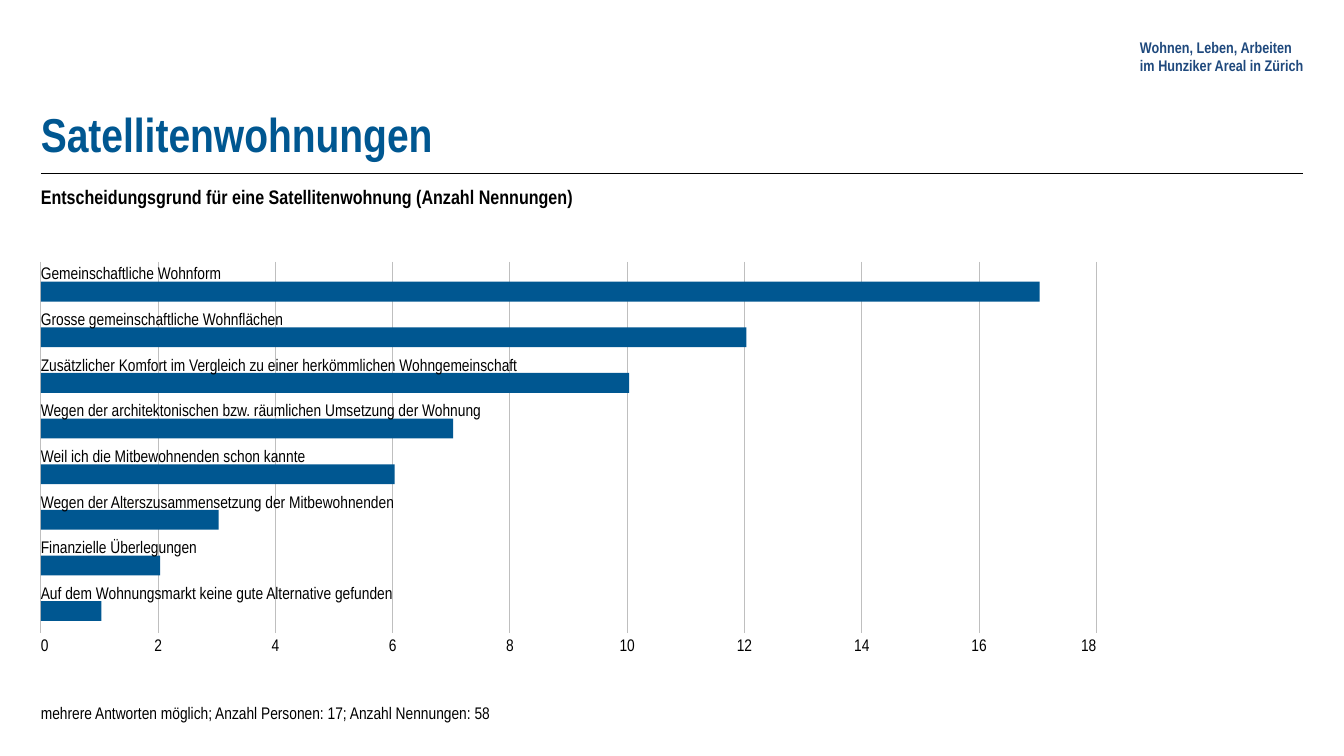
from lxml.etree import SubElement
from pptx import Presentation
from pptx.dml.color import RGBColor
from pptx.enum.shapes import MSO_CONNECTOR as Connector, MSO_SHAPE as Shape
from pptx.enum.text import MSO_ANCHOR as Anchor, PP_ALIGN as Align
from pptx.oxml.ns import qn
from pptx.util import Cm, Pt

COLORS = {"blue": "005791", "navy": "1F497D", "grid": "BFBFBF", "black": "000000"}
FONT = "Arial Narrow"

LEFT = 1.03
CONTENT_WIDTH = 31.8
LABEL_WIDTH = 15.2
LABEL_HEIGHT = 0.46

AXIS_MAX = 18
AXIS_STEP = 2
AXIS_WIDTH = 26.6
UNIT = AXIS_WIDTH / AXIS_MAX
GRID_TOP = 6.6
GRID_BOTTOM = 15.95
TICK_TOP = 16
TICK_WIDTH = 1.2

FIRST_BAR_TOP = 7.1
BAR_PITCH = 1.15
BAR_HEIGHT = 0.5
BAR_EXTRA = 0.05
LABEL_RISE = 0.47

REASONS = [
    ("Gemeinschaftliche Wohnform", 17),
    ("Grosse gemeinschaftliche Wohnflächen", 12),
    ("Zusätzlicher Komfort im Vergleich zu einer herkömmlichen Wohngemeinschaft", 10),
    ("Wegen der architektonischen bzw. räumlichen Umsetzung der Wohnung", 7),
    ("Weil ich die Mitbewohnenden schon kannte", 6),
    ("Wegen der Alterszusammensetzung der Mitbewohnenden", 3),
    ("Finanzielle Überlegungen", 2),
    ("Auf dem Wohnungsmarkt keine gute Alternative gefunden", 1),
]


def color(name):
    return RGBColor.from_string(COLORS[name])


def add_text(slide, lines, left, top, width, height, size=12, bold=False,
             ink="black", align=Align.LEFT, anchor=Anchor.TOP):
    box = slide.shapes.add_textbox(Cm(left), Cm(top), Cm(width), Cm(height))
    frame = box.text_frame
    frame.word_wrap = True
    frame.vertical_anchor = anchor
    frame.margin_left = frame.margin_right = 0
    frame.margin_top = frame.margin_bottom = 0
    paragraph = frame.paragraphs[0]
    paragraph.alignment = align
    for index, line in enumerate(lines):
        if index:
            paragraph.add_line_break()
        run = paragraph.add_run()
        run.text = line
        run.font.name = FONT
        run.font.size = Pt(size)
        run.font.bold = bold
        run.font.color.rgb = color(ink)


def add_line(slide, start, end, ink, weight):
    line = slide.shapes.add_connector(
        Connector.STRAIGHT, *(Cm(value) for value in (*start, *end)))
    line.line.color.rgb = color(ink)
    line.line.width = Pt(weight)
    SubElement(line._element.spPr, qn("a:effectLst"))


def add_bar(slide, top, value):
    bar = slide.shapes.add_shape(
        Shape.RECTANGLE, Cm(LEFT), Cm(top),
        Cm(value * UNIT + BAR_EXTRA), Cm(BAR_HEIGHT))
    bar.shadow.inherit = False
    bar.fill.solid()
    bar.fill.fore_color.rgb = color("blue")
    bar.line.fill.background()


def add_axis(slide):
    for tick in range(0, AXIS_MAX + 1, AXIS_STEP):
        x = LEFT + tick * UNIT
        add_line(slide, (x, GRID_TOP), (x, GRID_BOTTOM), "grid", 0.75)
        if tick == 0:
            shift, align = 0, Align.LEFT
        elif tick == AXIS_MAX:
            shift, align = TICK_WIDTH, Align.RIGHT
        else:
            shift, align = TICK_WIDTH / 2, Align.CENTER
        add_text(slide, [str(tick)], x - shift, TICK_TOP, TICK_WIDTH, 0.6, align=align)


def add_reasons(slide):
    for row, (reason, mentions) in enumerate(REASONS):
        top = FIRST_BAR_TOP + row * BAR_PITCH
        add_bar(slide, top, mentions)
        add_text(slide, [reason], LEFT, top - LABEL_RISE, LABEL_WIDTH, LABEL_HEIGHT)


def main():
    deck = Presentation()
    deck.slide_width = Cm(33.87)
    deck.slide_height = Cm(19.05)
    slide = deck.slides.add_slide(deck.slide_layouts[6])

    add_text(slide, ["Wohnen, Leben, Arbeiten", "im Hunziker Areal in Zürich"],
             28.73, 0.89, 4.72, 1.07, size=11, bold=True, ink="navy",
             anchor=Anchor.MIDDLE)
    add_text(slide, ["Satellitenwohnungen"], LEFT, 0.91, CONTENT_WIDTH, 3.18,
             size=34, bold=True, ink="blue", anchor=Anchor.BOTTOM)
    add_line(slide, (LEFT, 4.37), (LEFT + CONTENT_WIDTH, 4.37), "black", 1)
    add_text(slide, ["Entscheidungsgrund für eine Satellitenwohnung (Anzahl Nennungen)"],
             LEFT, 4.65, CONTENT_WIDTH, 0.69, size=14, bold=True)
    add_axis(slide)
    add_reasons(slide)
    add_text(slide, ["mehrere Antworten möglich; Anzahl Personen: 17; Anzahl Nennungen: 58"],
             LEFT, 17.7, LABEL_WIDTH, LABEL_HEIGHT)

    deck.save("out.pptx")


if __name__ == "__main__":
    main()
